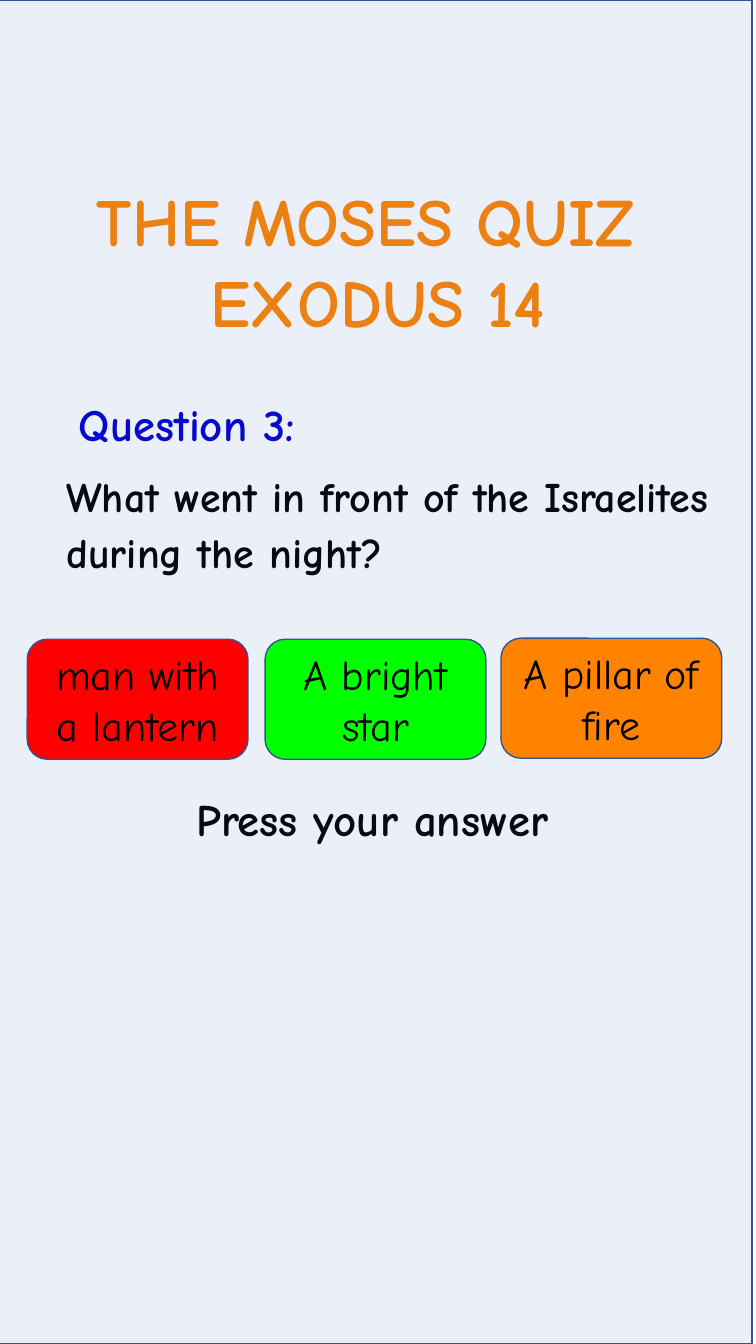
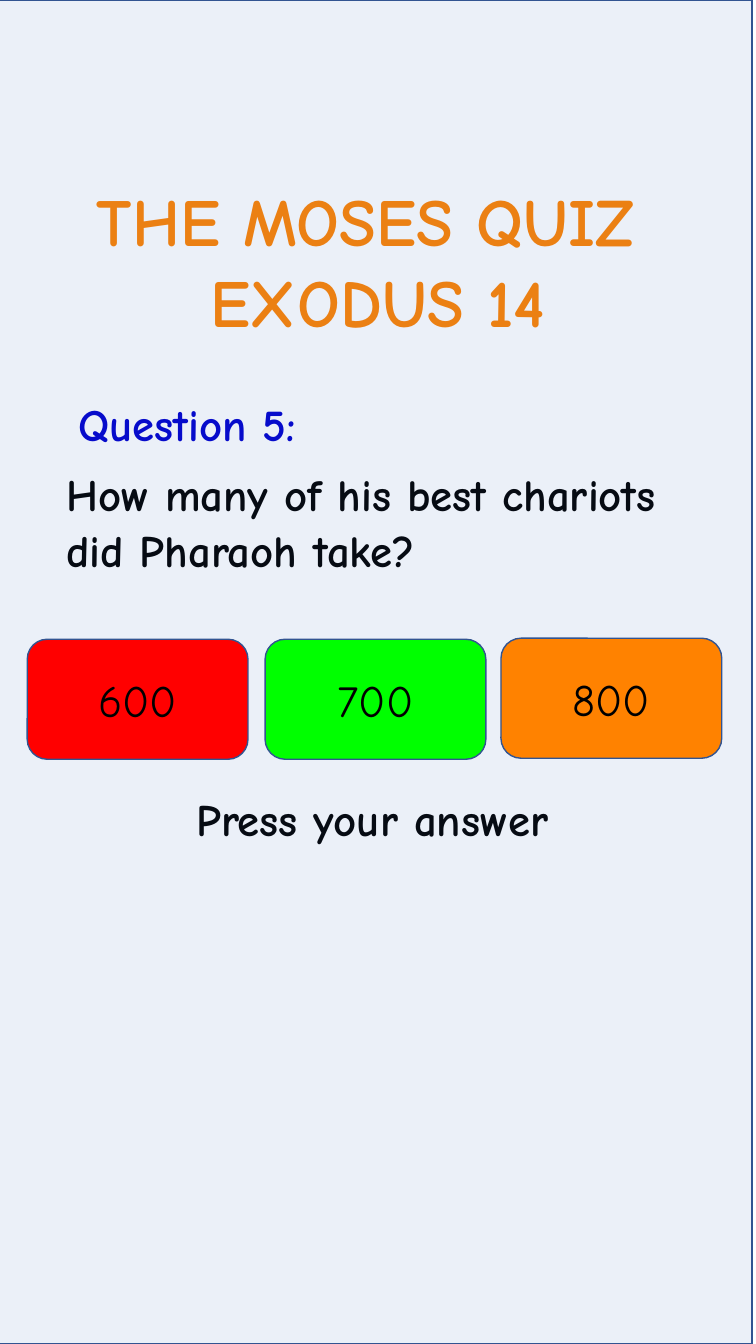
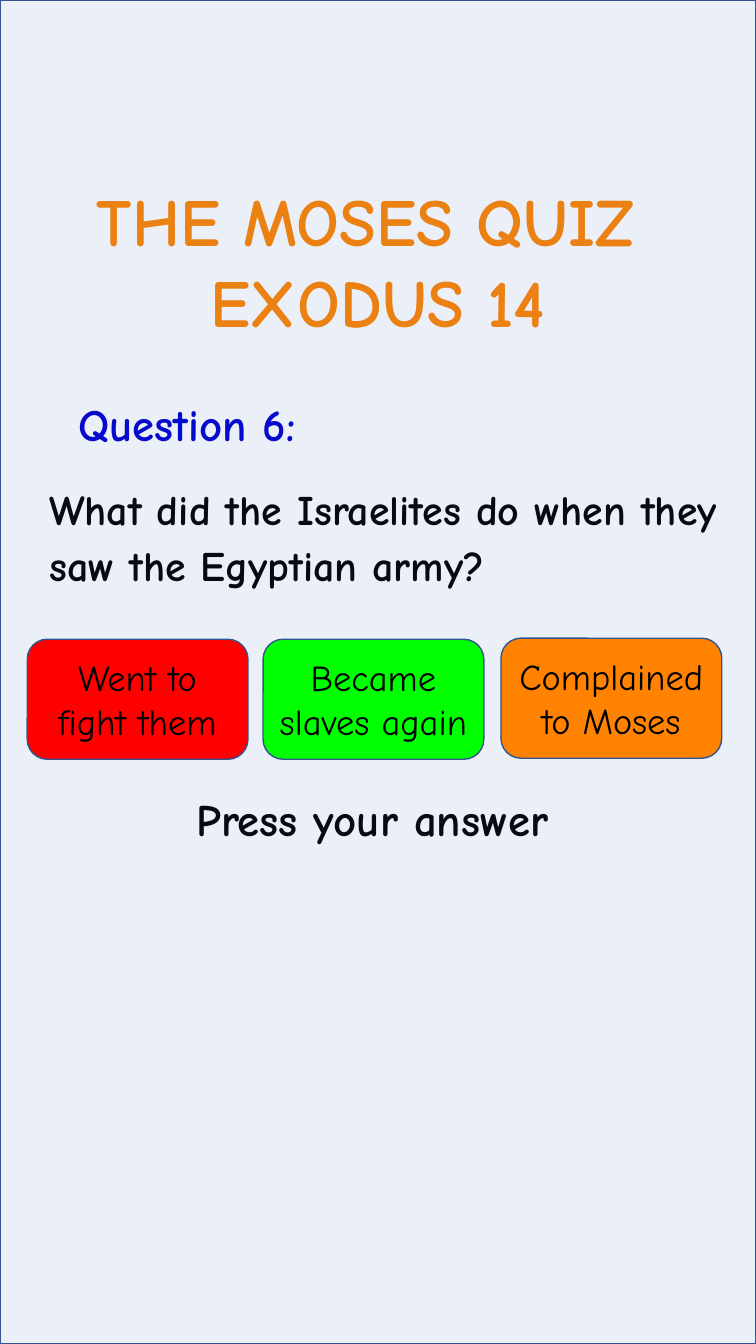
from lxml import etree
from pptx import Presentation
from pptx.dml.color import RGBColor
from pptx.enum.shapes import MSO_SHAPE as Shape
from pptx.enum.text import MSO_ANCHOR as Anchor, MSO_AUTO_SIZE as AutoSize, PP_ALIGN as Align
from pptx.oxml.ns import qn
from pptx.util import Inches, Pt

FONT = "Comic Neue"
BLACK = RGBColor(0x00, 0x00, 0x00)
RED = RGBColor(0xFF, 0x00, 0x00)
GREEN = RGBColor(0x00, 0xFF, 0x00)
ORANGE = RGBColor(0xFF, 0x82, 0x00)
HEADING_BLUE = RGBColor(0x00, 0x00, 0xCC)
TINT_BLUE = RGBColor(0x44, 0x72, 0xC4)
EDGE_BLUE = RGBColor(0x32, 0x54, 0x91)

WIDTH, HEIGHT = 7.5, 13.33
TITLE = ["THE MOSES QUIZ ", "EXODUS 14"]
PROMPT = "Press your answer"
BUTTON_SIZE = (2.19, 1.19)

QUIZ = [
    {
        "heading": "Question 3:",
        "question": "What went in front of the Israelites during the night?",
        "question_area": (0.56, 4.56, 6.6, 1.46),
        "question_size": 30,
        "answers": ["man with a lantern", "A bright star", "A pillar of fire"],
        "answer_size": 30,
        "middle_left": 2.63,
        "tint_left": -0.04,
    },
    {
        "heading": "Question 5:",
        "question": "How many of his best chariots did Pharaoh take?",
        "question_area": (0.56, 4.56, 6.6, 1.46),
        "question_size": 32,
        "answers": ["600", "700", "800"],
        "answer_size": 32,
        "middle_left": 2.63,
        "tint_left": -0.04,
    },
    {
        "heading": "Question 6:",
        "question": "What did the Israelites do when they saw the Egyptian army?",
        "question_area": (0.39, 4.69, 6.94, 1.46),
        "question_size": 30,
        "answers": ["Went to fight them", "Became slaves again", "Complained to Moses"],
        "answer_size": 26,
        "middle_left": 2.61,
        "tint_left": 0,
    },
]


def write(box, lines, size, color=BLACK, bold=True, align=Align.LEFT,
          wrap=True, anchor=Anchor.TOP, spacing=None, before=None, outline=None):
    frame = box.text_frame
    frame.word_wrap = wrap
    frame.auto_size = AutoSize.NONE if wrap else AutoSize.SHAPE_TO_FIT_TEXT
    frame.vertical_anchor = anchor
    for index, line in enumerate(lines):
        para = frame.add_paragraph() if index else frame.paragraphs[0]
        para.alignment = align
        para.line_spacing = spacing
        para.space_before = before
        span = para.add_run()
        span.text = line
        span.font.name = FONT
        span.font.size = Pt(size)
        span.font.bold = bold
        span.font.color.rgb = color
        if outline is not None:
            add_outline(span, outline)


def add_outline(span, color):
    line = etree.Element(qn("a:ln"), w=str(Pt(1.06)))
    fill = etree.SubElement(line, qn("a:solidFill"))
    etree.SubElement(fill, qn("a:srgbClr"), val=str(color))
    span.font._element.insert(0, line)


def add_text(page, area, lines, size, **style):
    box = page.shapes.add_textbox(*map(Inches, area))
    write(box, lines, size, **style)


def add_panel(page, kind, area, color):
    panel = page.shapes.add_shape(kind, *map(Inches, area))
    panel.shadow.inherit = False
    panel.fill.solid()
    panel.fill.fore_color.rgb = color
    panel.line.color.rgb = EDGE_BLUE
    panel.line.width = Pt(1)
    return panel


def add_tint(page, left):
    tint = add_panel(page, Shape.RECTANGLE, (left, 0, WIDTH, HEIGHT), TINT_BLUE)
    color = tint._element.spPr.find(qn("a:solidFill")).find(qn("a:srgbClr"))
    etree.SubElement(color, qn("a:alpha"), val="10000")


def add_quiz_page(deck, quiz):
    page = deck.slides.add_slide(deck.slide_layouts[6])
    add_text(page, (0.3, 1.73, 6.89, 1.72), TITLE, 48, color=ORANGE,
             align=Align.CENTER, wrap=False, outline=RED)
    add_text(page, (0.47, 3.89, 2.77, 0.64), [quiz["heading"]], 32,
             color=HEADING_BLUE, align=Align.CENTER, wrap=False)
    add_text(page, quiz["question_area"], [quiz["question"]], quiz["question_size"],
             spacing=Pt(40), before=Pt(7.5))
    add_text(page, (1.85, 7.86, 4.22, 0.72), [PROMPT], 32, spacing=0.9, before=Pt(7.5))
    add_tint(page, quiz["tint_left"])

    places = [(0.27, 6.34), (quiz["middle_left"], 6.34), (4.97, 6.33)]
    for answer, place, color in zip(quiz["answers"], places, (RED, GREEN, ORANGE)):
        button = add_panel(page, Shape.ROUNDED_RECTANGLE, place + BUTTON_SIZE, color)
        write(button, [answer], quiz["answer_size"], bold=False,
              align=Align.CENTER, anchor=Anchor.MIDDLE)


def main():
    deck = Presentation()
    deck.slide_width = Inches(WIDTH)
    deck.slide_height = Inches(HEIGHT)
    for quiz in QUIZ:
        add_quiz_page(deck, quiz)
    deck.save("out.pptx")


if __name__ == "__main__":
    main()
